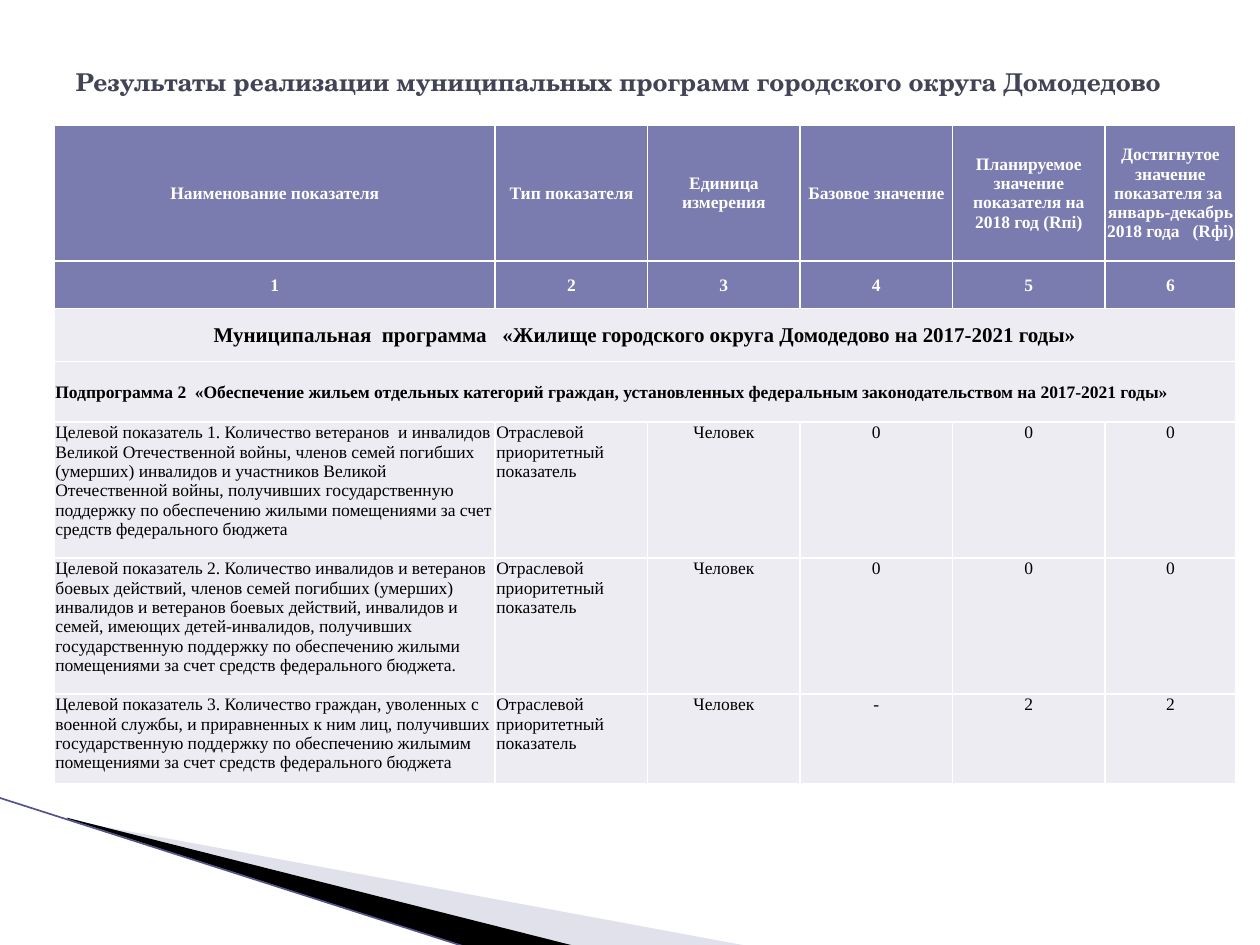
import pptx
import pptx.util
import pptx.dml.color
import pptx.enum.shapes
import pptx.enum.text
import pptx.oxml
import pptx.oxml.ns
from lxml import etree

Inches = pptx.util.Inches
Align = pptx.enum.text.PP_ALIGN
Anchor = pptx.enum.text.MSO_ANCHOR

COLORS = {
    "header": "7A7BAE",
    "body": "ECECF2",
    "white": "FFFFFF",
    "black": "000000",
    "title": "424456",
    "wedge": "B6B6D1",
    "edge": "53548A",
}
TITLE = "Результаты реализации муниципальных программ городского округа Домодедово"
HEADINGS = [
    "Наименование показателя",
    "Тип показателя",
    "Единица измерения",
    "Базовое значение",
    "Планируемое значение показателя на 2018 год (Rпi)",
    "Достигнутое значение показателя за  январь-декабрь 2018 года   (Rфi)",
]
PROGRAM = "Муниципальная  программа   «Жилище городского округа Домодедово на 2017-2021 годы»"
SUBPROGRAM = (
    "Подпрограмма 2  «Обеспечение жильем отдельных категорий граждан, "
    "установленных федеральным законодательством на 2017-2021 годы»"
)
KIND = "Отраслевой приоритетный показатель"
UNIT = "Человек"
INDICATORS = [
    (
        "Целевой показатель 1. Количество ветеранов  и инвалидов Великой Отечественной войны, "
        "членов семей погибших (умерших) инвалидов и участников Великой Отечественной войны, "
        "получивших государственную поддержку по обеспечению жилыми помещениями "
        "за счет средств федерального бюджета",
        KIND, UNIT, "0", "0", "0",
    ),
    (
        "Целевой показатель 2. Количество инвалидов и ветеранов боевых действий, "
        "членов семей погибших (умерших) инвалидов и ветеранов боевых действий, "
        "инвалидов и семей, имеющих детей-инвалидов, получивших государственную поддержку "
        "по обеспечению жилыми помещениями за счет средств федерального бюджета.",
        KIND, UNIT, "0", "0", "0",
    ),
    (
        "Целевой показатель 3. Количество граждан, уволенных с военной службы, "
        "и приравненных к ним лиц, получивших государственную поддержку "
        "по обеспечению жилымим помещениями за счет средств федерального бюджета",
        KIND, UNIT, "-", "2", "2",
    ),
]
NUMBERS = [str(number) for number in range(1, len(HEADINGS) + 1)]
ROWS = [HEADINGS, NUMBERS, [PROGRAM], [SUBPROGRAM], *INDICATORS]
COLUMN_WIDTHS = [3.5, 1.21, 1.21, 1.21, 1.21, 1.04]
ROW_HEIGHTS = [1.08, 0.38, 0.42, 0.48, 1.08, 1.08, 0.71]
HEADER_ROWS, PROGRAM_ROW, SUBPROGRAM_ROW = (0, 1), 2, 3
WEDGES = [
    ("wedge", 40, [(0.55, 6.51), (5.95, 7.51), (4.56, 7.51), (0.55, 6.5)]),
    ("black", 100, [(0.53, 6.49), (4.57, 7.51), (3.72, 7.52), (0.54, 6.5)]),
]


def rgb(name):
    return pptx.dml.color.RGBColor.from_string(COLORS[name])


def style(para, size, font, color, bold):
    for span in para.runs:
        span.font.size = pptx.util.Pt(size)
        span.font.name = font
        span.font.bold = bold
        span.font.color.rgb = rgb(color)


def add_wedge(page, color, opacity, points):
    corners = [(Inches(x), Inches(y)) for x, y in points]
    builder = page.shapes.build_freeform(*corners[0])
    builder.add_line_segments(corners[1:], close=True)
    wedge = builder.convert_to_shape()
    wedge.shadow.inherit = False
    wedge.fill.solid()
    wedge.fill.fore_color.rgb = rgb(color)
    wedge.line.fill.background()
    if opacity < 100:
        tint = wedge.fill._xPr.find(".//" + pptx.oxml.ns.qn("a:srgbClr"))
        etree.SubElement(tint, pptx.oxml.ns.qn("a:alpha"), val=str(opacity * 1000))


def add_edge(page):
    edge = page.shapes.add_connector(
        pptx.enum.shapes.MSO_CONNECTOR.STRAIGHT,
        Inches(-0.01), Inches(6.33), Inches(3.71), Inches(7.52),
    )
    edge.line.color.rgb = rgb("edge")
    edge.line.width = pptx.util.Pt(0.95)
    etree.SubElement(edge._element.spPr, pptx.oxml.ns.qn("a:effectLst"))


def add_title(page):
    title = page.shapes.title
    title.left, title.top = Inches(0.5), Inches(0.3)
    title.width, title.height = Inches(9), Inches(0.69)
    title.text_frame.text = TITLE
    title.text_frame.word_wrap = True
    title.text_frame.vertical_anchor = Anchor.MIDDLE
    para = title.text_frame.paragraphs[0]
    para.alignment = Align.LEFT
    style(para, 14, "TeX Gyre Schola", "title", True)


def format_cell(cell, fill):
    properties = cell._tc.get_or_add_tcPr()
    for side in ("lnL", "lnR", "lnT", "lnB"):
        properties.append(pptx.oxml.parse_xml(
            f'<a:{side} {pptx.oxml.ns.nsdecls("a")} w="12700"><a:solidFill>'
            f'<a:srgbClr val="{COLORS["white"]}"/></a:solidFill></a:{side}>'
        ))
    cell.fill.solid()
    cell.fill.fore_color.rgb = rgb(fill)
    cell.margin_left = cell.margin_right = cell.margin_top = Inches(0.01)
    cell.margin_bottom = 0


def add_results_table(page):
    table = page.shapes.add_table(
        len(ROWS), len(HEADINGS), Inches(0.43), Inches(0.99),
        Inches(sum(COLUMN_WIDTHS)), Inches(sum(ROW_HEIGHTS)),
    ).table
    for column, width in zip(table.columns, COLUMN_WIDTHS):
        column.width = Inches(width)
    for row, height in zip(table.rows, ROW_HEIGHTS):
        row.height = Inches(height)
    for r, texts in enumerate(ROWS):
        header = r in HEADER_ROWS
        heading = r <= SUBPROGRAM_ROW
        for c in range(len(HEADINGS)):
            format_cell(table.cell(r, c), "header" if header else "body")
        if len(texts) == 1:
            table.cell(r, 0).merge(table.cell(r, len(HEADINGS) - 1))
        for c, text in enumerate(texts):
            cell = table.cell(r, c)
            cell.text_frame.text = text
            cell.vertical_anchor = Anchor.MIDDLE if heading else Anchor.TOP
            centred = r <= PROGRAM_ROW or c > 1
            para = cell.text_frame.paragraphs[0]
            para.alignment = Align.CENTER if centred else Align.LEFT
            size = 12 if r == PROGRAM_ROW else 10
            style(para, size, "Times New Roman", "white" if header else "black", heading)


def main():
    deck = pptx.Presentation()
    deck.slide_width, deck.slide_height = Inches(10), Inches(7.5)
    page = deck.slides.add_slide(deck.slide_layouts[5])
    for wedge in WEDGES:
        add_wedge(page, *wedge)
    add_edge(page)
    add_title(page)
    add_results_table(page)
    deck.save("out.pptx")


if __name__ == "__main__":
    main()
